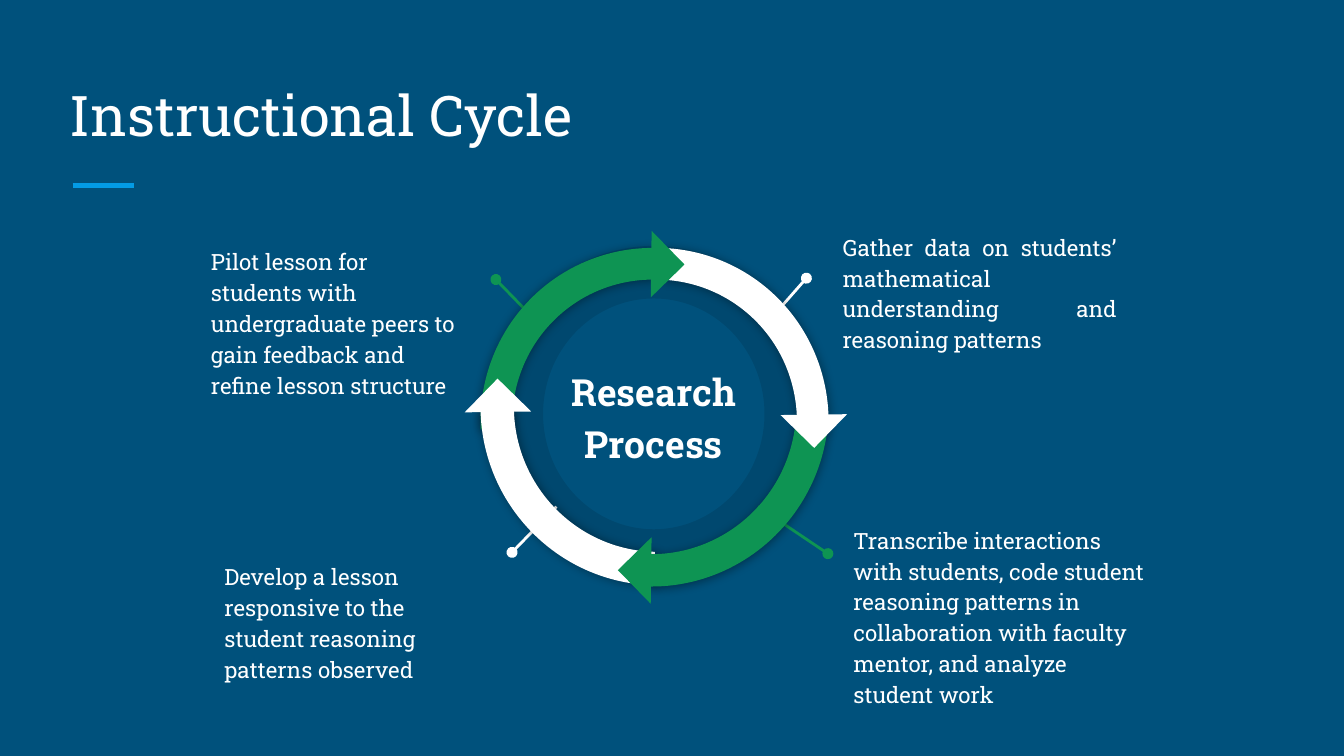
from lxml import etree
from pptx import Presentation
from pptx import util as u
from pptx.dml.color import RGBColor
from pptx.enum import shapes, text
from pptx.oxml.ns import qn

NAVY = RGBColor(0x00, 0x51, 0x7C)
BLUE = RGBColor(0x03, 0x9B, 0xE5)
GREEN = RGBColor(0x0E, 0x94, 0x53)
WHITE = RGBColor(0xFF, 0xFF, 0xFF)
BLACK = RGBColor(0x00, 0x00, 0x00)
FONT = "Roboto Slab"
KIND = shapes.MSO_SHAPE
ALIGN = text.PP_ALIGN

TITLE = "Instructional Cycle"
HUB = "Research Process"
STEPS = [
    ("Pilot lesson for students with undergraduate peers to gain feedback "
     "and refine lesson structure",
     (1.17, 1.42, 2.63), ALIGN.LEFT, (3.69, 2.08, 4.02, 2.42), GREEN),
    ("Develop a lesson responsive to the student reasoning patterns observed",
     (1.27, 3.76, 2.69), ALIGN.LEFT, (3.81, 4.11, 4.14, 3.77), WHITE),
    ("Transcribe interactions with students, code student reasoning patterns "
     "in collaboration with faculty mentor, and analyze student work",
     (5.95, 3.49, 3), ALIGN.LEFT, (6.16, 4.12, 5.64, 3.77), GREEN),
    ("Gather data on students’ mathematical understanding and reasoning "
     "patterns",
     (5.87, 1.31, 2.84), ALIGN.JUSTIFY, (6, 2.07, 5.71, 2.4), WHITE),
]
ARCS = [
    (3.58, 1.84, 329.4, True, (143.49, 198.72), 9.1, GREEN, 90),
    (3.57, 1.84, 30.6, False, (145.46, 199.02), 9.1, WHITE, 90),
    (3.58, 1.73, 149.4, False, (180.42, 17.99), 9.6, WHITE, 0),
    (3.57, 1.74, 210.6, True, (179.67, 15.3), 9.3, GREEN, 90),
]
TIPS = [
    (3.53, 2.89, 134.3, WHITE),
    (5.88, 2.91, 314.3, WHITE),
    (4.67, 4.07, 45.7, GREEN),
    (4.67, 1.79, 225.7, GREEN),
]

deck = Presentation()
deck.slide_width = u.Inches(10)
deck.slide_height = deck.slide_width * 9 // 16
slide = deck.slides.add_slide(deck.slide_layouts[6])
slide.background.fill.solid()
slide.background.fill.fore_color.rgb = NAVY


def inch(*vals):
    return [u.Inches(v) for v in vals]


def sub(node, tag, **attrs):
    return etree.SubElement(node, qn(tag), attrs)


def tint(node, alpha):
    sub(node, "a:alpha", val=str(alpha * 1000))


def line(ends, color, width, dot=False):
    link = slide.shapes.add_connector(
        shapes.MSO_CONNECTOR.STRAIGHT, *inch(*ends))
    link.line.color.rgb = color
    link.line.width = u.Pt(width)
    props = link._element.spPr
    if dot:
        sub(props.find(qn("a:ln")), "a:headEnd", type="oval")
    sub(props, "a:effectLst")


def label(words, box, size, pad, foot, align=ALIGN.LEFT, space=1.0,
          anchor=text.MSO_ANCHOR.TOP, bold=False):
    frame = slide.shapes.add_textbox(*inch(*box)).text_frame
    frame.word_wrap = True
    frame.vertical_anchor = anchor
    frame.margin_left = frame.margin_right = u.Inches(pad)
    frame.margin_top, frame.margin_bottom = inch(pad, foot)
    para = frame.paragraphs[0]
    para.alignment, para.line_spacing = align, space
    run = para.add_run()
    run.text = words
    font = run.font
    font.name, font.size, font.bold = FONT, u.Pt(size), bold
    font.color.rgb = WHITE


def shape(kind, box, color, turn=0, adjust=()):
    item = slide.shapes.add_shape(kind, *inch(*box))
    item.shadow.inherit = False
    item.fill.solid()
    item.fill.fore_color.rgb = color
    item.line.fill.background()
    item.rotation = turn
    for i, val in enumerate(adjust):
        item.adjustments[i] = val
    return item


def shade(item, angle):
    glow = sub(item._element.spPr.find(qn("a:effectLst")), "a:outerShdw",
               blurRad=str(u.Pt(5.6)), dist=str(u.Pt(0.8)),
               dir=str(angle * 60000), algn="bl", rotWithShape="0")
    tint(sub(glow, "a:srgbClr", val=str(BLACK)), 40)


line((0.54, 1.38, 1, 1.38), BLUE, 3)
label(TITLE, (0.42, 0.5, 9.15, 0.75), 30, 0.1, 0.1)

disc = shape(KIND.DONUT, (3.65, 1.83, 2.43, 2.5), BLACK,
             adjust=(16.1 / 100,))
tint(disc._element.spPr.find(qn("a:solidFill"))[0], 10)

for words, spot, align, ends, color in STEPS:
    line(ends, color, 1.5, dot=True)
    label(words, (*spot, 0.66), 12, 0.4, 0.26, align, 1.15)

label(HUB, (3.83, 2.68, 2.07, 0.79), 20, 0.4, 0.39, ALIGN.CENTER, 1.15,
      text.MSO_ANCHOR.MIDDLE, True)

for left, top, turn, flip, span, thick, color, angle in ARCS:
    arc = shape(KIND.BLOCK_ARC, (left, top, 2.59, 2.63), color, turn,
                (*span, thick / 100))
    if flip:
        arc._element.spPr.find(qn("a:xfrm")).set("flipH", "1")
    shade(arc, angle)

for left, top, turn, color in TIPS:
    shape(KIND.RIGHT_TRIANGLE, (left, top, 0.35, 0.35), color, turn)

deck.save("out.pptx")
